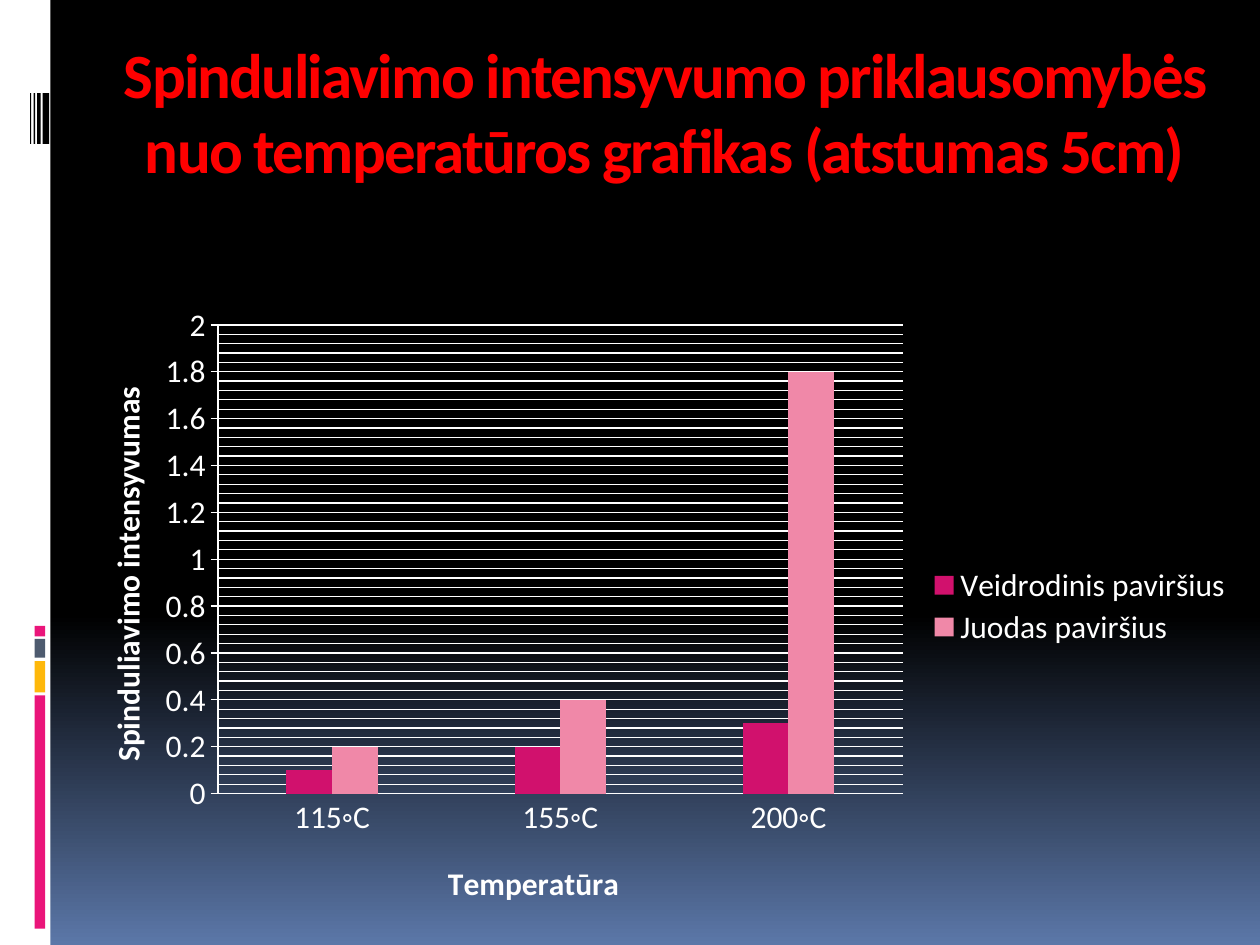
from copy import deepcopy

from lxml import etree
from pptx import Presentation
from pptx.chart.data import CategoryChartData
from pptx.dml.color import RGBColor
from pptx.enum.chart import XL_CHART_TYPE, XL_LEGEND_POSITION, XL_TICK_MARK
from pptx.enum.shapes import MSO_SHAPE
from pptx.enum.text import MSO_ANCHOR, PP_ALIGN
from pptx.oxml.ns import qn
from pptx.util import Cm, Pt

RECTANGLE = MSO_SHAPE.RECTANGLE
CLUSTERED = XL_CHART_TYPE.COLUMN_CLUSTERED
LEGEND_RIGHT = XL_LEGEND_POSITION.RIGHT
TICK_NONE, TICK_OUT = XL_TICK_MARK.NONE, XL_TICK_MARK.OUTSIDE
ANCHOR_TOP = MSO_ANCHOR.TOP
ALIGN_CENTER = PP_ALIGN.CENTER
TITLE_ONLY = 5
FONT = "Calibri"
WHITE, BLACK, PINK = "FFFFFF", "000000", "EA157A"


def color(hex_string):
    return RGBColor.from_string(hex_string)


def paint_background(slide):
    fill = slide.background.fill
    fill.gradient()
    fill.gradient_angle = 270
    for stop, position, shade in zip(fill.gradient_stops, (0.65, 1), (BLACK, "5B77A8")):
        stop.position = position
        stop.color.rgb = color(shade)


def add_bar(slide, left, top, width, height, shade):
    bar = slide.shapes.add_shape(RECTANGLE, Cm(left), Cm(top), Cm(width), Cm(height))
    bar.shadow.inherit = False
    bar.fill.solid()
    bar.fill.fore_color.rgb = color(shade)
    bar.line.fill.background()


def add_side_strip(slide, left, top, width, height):
    add_bar(slide, left, top, width, height, WHITE)
    blocks = [(12.62, 0.21, PINK), (12.88, 0.38, "4E5B6F"),
              (13.33, 0.63, "FEB80A"), (14.02, 4.7, PINK)]
    for offset, block_height, shade in blocks:
        add_bar(slide, left + 0.7, top + offset, 0.21, block_height, shade)
    for offset, line_width in [(0.61, 0.02), (0.68, 0.03), (0.75, 0.07), (0.86, 0.13)]:
        add_bar(slide, left + offset, top + 1.88, line_width, 1.02, BLACK)


def place_title(slide, left, top, width, height):
    title = slide.shapes.title
    title.left, title.top, title.width, title.height = map(Cm, (left, top, width, height))
    frame = title.text_frame
    frame.text = ("Spinduliavimo intensyvumo priklausomybės "
                  "nuo temperatūros grafikas (atstumas 5cm)")
    frame.word_wrap = True
    frame.vertical_anchor = ANCHOR_TOP
    paragraph = frame.paragraphs[0]
    paragraph.alignment = ALIGN_CENTER
    paragraph.line_spacing = 1.0
    paragraph.space_before = Pt(0)
    run = paragraph.runs[0]
    run.font.name, run.font.size, run.font.bold = FONT, Pt(36), True
    run.font.color.rgb = color("FF0000")
    run.font._element.set("spc", "-100")


def set_layout(element, index, **fractions):
    for old_layout in element.findall(qn("c:layout")):
        element.remove(old_layout)
    layout = etree.Element(qn("c:layout"))
    manual = etree.SubElement(layout, qn("c:manualLayout"))
    if index == 0:
        etree.SubElement(manual, qn("c:layoutTarget")).set("val", "inner")
    for name in ("xMode", "yMode"):
        etree.SubElement(manual, qn(f"c:{name}")).set("val", "edge")
    for name, value in fractions.items():
        etree.SubElement(manual, qn(f"c:{name}")).set("val", str(value))
    element.insert(index, layout)


def style_line(line):
    line.color.rgb = color(WHITE)
    line.width = Pt(0.75)


def style_axis(axis, title, tick, x, y):
    frame = axis.axis_title.text_frame
    frame.text = title
    font = frame.paragraphs[0].runs[0].font
    font.name, font.size, font.bold = FONT, Pt(18), True
    font.color.rgb = color(WHITE)
    set_layout(axis.axis_title._element, 1, x=x, y=y)
    axis.major_tick_mark, axis.minor_tick_mark = tick, TICK_NONE
    style_line(axis.format.line)


def style_gridlines(axis):
    axis.has_major_gridlines = axis.has_minor_gridlines = True
    style_line(axis.major_gridlines.format.line)
    major = axis._element.find(qn("c:majorGridlines"))
    minor = axis._element.find(qn("c:minorGridlines"))
    minor.append(deepcopy(major.find(qn("c:spPr"))))


def add_intensity_chart(slide, left, top, width, height):
    data = CategoryChartData()
    data.categories = ["115◦C", "155◦C", "200◦C"]
    data.add_series("Veidrodinis paviršius", (0.1, 0.2, 0.3))
    data.add_series("Juodas paviršius", (0.2, 0.4, 1.8))
    chart = slide.shapes.add_chart(
        CLUSTERED, Cm(left), Cm(top), Cm(width), Cm(height), data).chart
    chart.has_title = False
    chart.font.name, chart.font.size = FONT, Pt(18)
    chart.font.color.rgb = color(WHITE)

    plot = chart.plots[0]
    plot.gap_width, plot.overlap = 300, 0
    plot.vary_by_categories = False
    for series, shade in zip(plot.series, ("D1116D", "F088A8")):
        series.format.fill.solid()
        series.format.fill.fore_color.rgb = color(shade)

    style_axis(chart.category_axis, "Temperatūra", TICK_NONE, 0.32, 0.9)
    value_axis = chart.value_axis
    style_axis(value_axis, "Spinduliavimo intensyvumas", TICK_OUT, 0.03, 0.14)
    value_axis.minimum_scale, value_axis.maximum_scale = 0, 2
    value_axis.major_unit, value_axis.minor_unit = 0.2, 0.04
    style_gridlines(value_axis)

    chart.has_legend = True
    chart.legend.position = LEGEND_RIGHT
    chart.legend.include_in_layout = False
    set_layout(chart.legend._element, 1, x=0.73, y=0.43, w=0.26, h=0.14)
    plot_area = chart._chartSpace.chart.plotArea
    set_layout(plot_area, 0, x=0.13, y=0.05, w=0.58, h=0.75)


def main():
    presentation = Presentation()
    presentation.slide_width, presentation.slide_height = Cm(25.4), Cm(19.05)
    slide = presentation.slides.add_slide(presentation.slide_layouts[TITLE_ONLY])
    paint_background(slide)
    add_side_strip(slide, 0, 0, 1.02, 19.05)
    place_title(slide, 1.7, 0.58, 23.4, 5.77)
    add_intensity_chart(slide, 1.3, 5.92, 23.8, 12.6)
    presentation.save("out.pptx")


if __name__ == "__main__":
    main()
